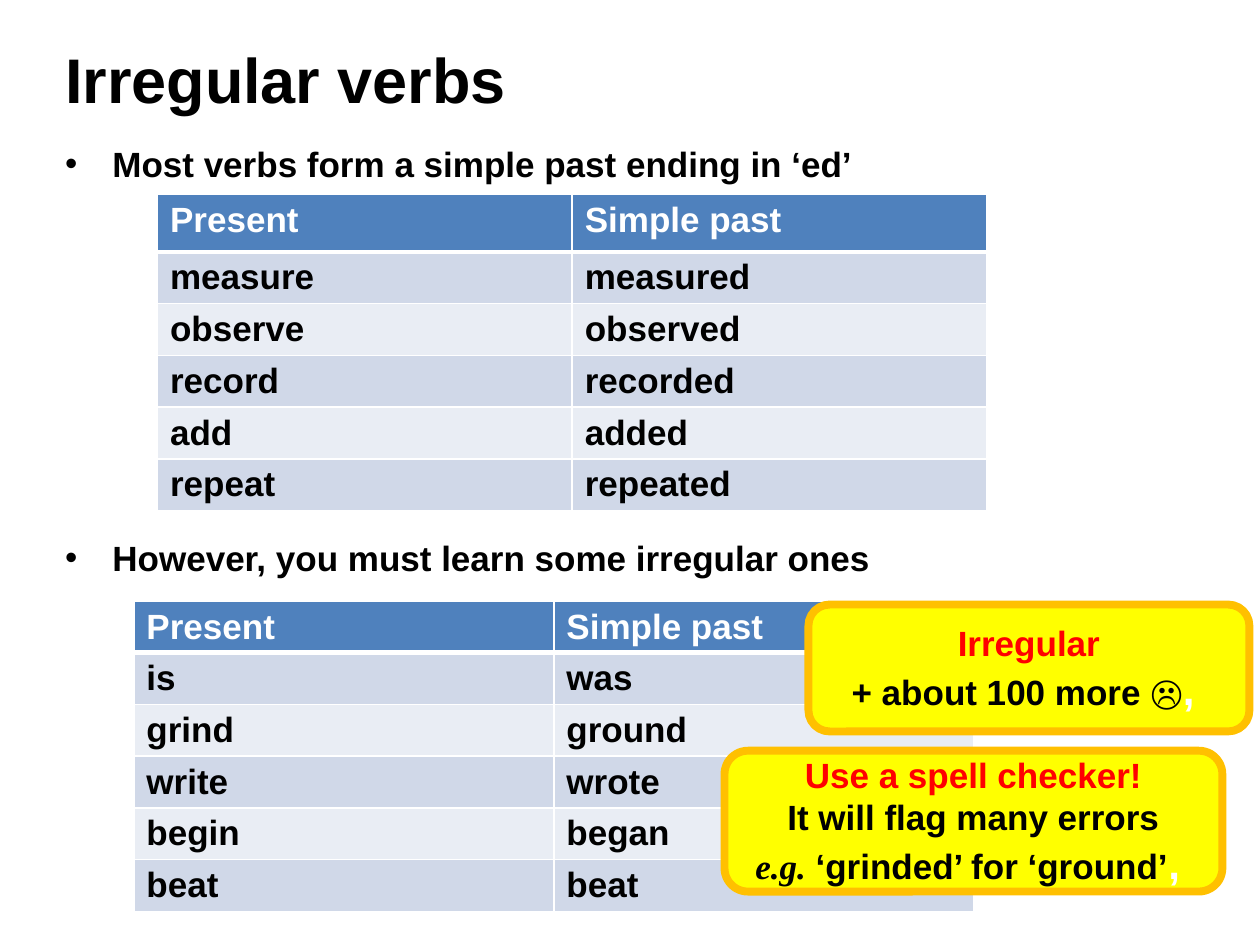
"""Build the slide on regular and irregular verbs."""
from lxml import etree
from pptx import Presentation, util as u
from pptx.dml.color import RGBColor
from pptx.enum import shapes, text
from pptx.oxml import ns

COLOURS = {
    "black": "000000", "white": "FFFFFF", "red": "FF0000", "yellow": "FFFF00",
    "gold": "FFC000", "header": "4F81BD", "odd": "D0D8E8", "even": "E9EDF4",
}
REGULAR = [("Present", "Simple past"), ("measure", "measured"), ("observe", "observed"),
           ("record", "recorded"), ("add", "added"), ("repeat", "repeated")]
IRREGULAR = [("Present", "Simple past"), ("is", "was"), ("grind", "ground"),
             ("write", "wrote"), ("begin", "began"), ("beat", "beat")]


class VerbSlide:
    """Hold the style and the current slide."""

    base = {"name": "Arial", "size": 20, "bold": True, "italic": False}

    def __init__(self, deck):
        self.slide = deck.slides.add_slide(deck.slide_layouts[1])

    def colour(self, name):
        return RGBColor.from_string(COLOURS[name])

    def add_words(self, paragraph, words, colour="black", **changes):
        run = paragraph.add_run()
        run.text = words
        for key, value in {**self.base, **changes}.items():
            setattr(run.font, key, u.Pt(value) if key == "size" else value)
        run.font.color.rgb = self.colour(colour)

    def place(self, holder, box, anchor):
        for key, value in zip(("left", "top", "width", "height"), box):
            setattr(holder, key, u.Pt(value))
        frame_format = {"word_wrap": True, "auto_size": text.MSO_AUTO_SIZE.NONE,
                        "vertical_anchor": anchor}
        for key, value in frame_format.items():
            setattr(holder.text_frame, key, value)
        return holder.text_frame

    def title(self, words, box):
        heading = self.place(self.slide.shapes.title, box, text.MSO_ANCHOR.MIDDLE).paragraphs[0]
        heading.alignment = text.PP_ALIGN.LEFT
        self.add_words(heading, words, size=36)

    def bullets(self, points, box):
        frame = self.place(self.slide.placeholders[1], box, text.MSO_ANCHOR.TOP)
        for index, (words, gap) in enumerate(points):
            point = frame.add_paragraph() if index else frame.paragraphs[0]
            point.space_before = u.Pt(gap)
            properties = point._p.get_or_add_pPr()
            properties.set("marL", str(u.Pt(27)))
            properties.set("indent", str(u.Pt(-27)))
            self.add_words(point, words)

    def borders(self, cell, row):
        widths = {"lnL": 1, "lnR": 1, "lnT": 3 if row == 1 else 1, "lnB": 1 if row else 3}
        for side, width in widths.items():
            line = etree.SubElement(cell._tc.get_or_add_tcPr(), ns.qn(f"a:{side}"), w=str(u.Pt(width)))
            fill = etree.SubElement(line, ns.qn("a:solidFill"))
            etree.SubElement(fill, ns.qn("a:srgbClr"), val=COLOURS["white"])

    def table(self, verbs, left, top, column_width, header_height, row_height):
        height = header_height + row_height * (len(verbs) - 1)
        grid = self.slide.shapes.add_table(
            len(verbs), 2, u.Pt(left), u.Pt(top), u.Pt(2 * column_width), u.Pt(height)).table
        for row, forms in enumerate(verbs):
            grid.rows[row].height = u.Pt(row_height if row else header_height)
            shade = ("even", "odd")[row % 2] if row else "header"
            for column, form in enumerate(forms):
                cell = grid.cell(row, column)
                self.borders(cell, row)
                cell.fill.solid()
                cell.fill.fore_color.rgb = self.colour(shade)
                self.add_words(cell.text_frame.paragraphs[0], form, "black" if row else "white")

    def callout(self, lines, box):
        note = self.slide.shapes.add_shape(shapes.MSO_SHAPE.ROUNDED_RECTANGLE, *map(u.Pt, box))
        note.shadow.inherit = False
        note.fill.solid()
        note.fill.fore_color.rgb = self.colour("yellow")
        note.line.color.rgb = self.colour("gold")
        note.line.width = u.Pt(4.5)
        frame = self.place(note, box, text.MSO_ANCHOR.MIDDLE)
        for index, runs in enumerate(lines):
            line = frame.add_paragraph() if index else frame.paragraphs[0]
            line.alignment = text.PP_ALIGN.CENTER
            for words, colour, changes in runs:
                self.add_words(line, words, colour, **changes)


def main():
    deck = Presentation()
    deck.slide_width, deck.slide_height = u.Pt(720), u.Pt(540)
    verbs = VerbSlide(deck)
    verbs.title("Irregular verbs", (30, 0, 648, 90))
    verbs.bullets([("Most verbs form a simple past ending in ‘ed’", 4),
                   ("However, you must learn some irregular ones", 201)], (30, 78, 648, 432))
    verbs.table(REGULAR, 90, 111, 237, 33, 29)
    verbs.table(IRREGULAR, 76.5, 343.5, 240, 29.5, 29.5)
    comma = (", ", "white", {"size": 24})
    verbs.callout([[("Irregular", "red", {})],
                   [("+ about 100 more ☹", "black", {}), comma]], (462, 345.5, 252, 72.5))
    verbs.callout([[("Use a spell checker!", "red", {})],
                   [("It will flag many errors", "black", {})],
                   [("e.g.", "black", {"name": "Times New Roman", "italic": True}),
                    (" ‘grinded’ for ‘ground’", "black", {}), comma]], (414, 429, 284.5, 80.5))
    deck.save("out.pptx")


if __name__ == "__main__":
    main()
